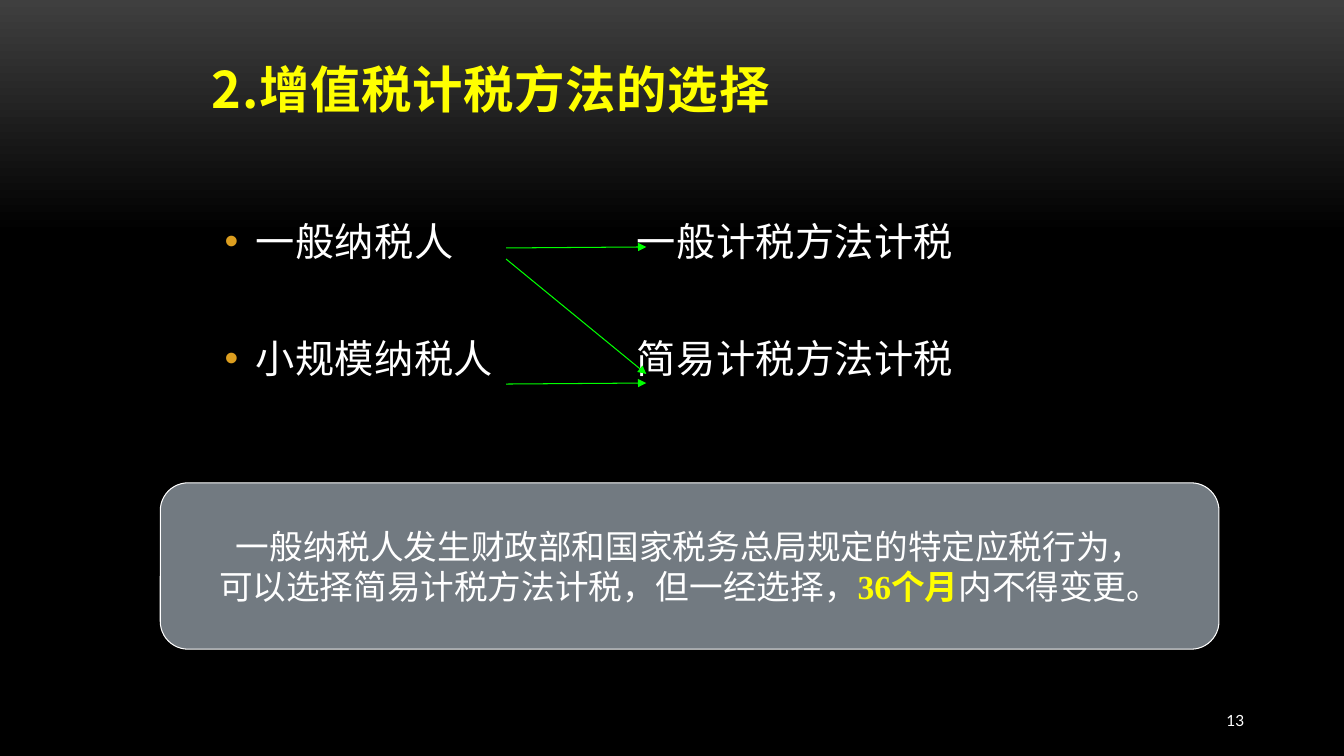
from lxml import etree
from pptx import Presentation
from pptx.dml.color import RGBColor
from pptx.enum.shapes import MSO_CONNECTOR, MSO_SHAPE
from pptx.enum.text import MSO_ANCHOR, PP_ALIGN
from pptx.oxml.ns import qn
from pptx.util import Inches, Pt

LINE = MSO_CONNECTOR.STRAIGHT
ROUND = MSO_SHAPE.ROUNDED_RECTANGLE
TOP, MIDDLE, BOTTOM = MSO_ANCHOR.TOP, MSO_ANCHOR.MIDDLE, MSO_ANCHOR.BOTTOM
LEFT, CENTER, RIGHT = PP_ALIGN.LEFT, PP_ALIGN.CENTER, PP_ALIGN.RIGHT
WIDE, HIGH = Inches(13.33), Inches(7.5)
HAN = "Noto Sans CJK SC"
SERIF = "Times New Roman"
COLORS = {
    "white": "FFFFFF", "yellow": "FFFF00", "green": "00FF00", "slate": "727A81",
    "amber": "DC9E1F", "gray": "3F3F3F", "black": "000000",
}


def rgb(name):
    return RGBColor.from_string(COLORS[name])


def across(share):
    return round(WIDE * share / 100)


def down(share):
    return round(HIGH * share / 100)


def place(left, top, width, height):
    return across(left), down(top), across(width), down(height)


def add_bullet(para):
    props = para._p.get_or_add_pPr()
    props.set("marL", str(Inches(0.31)))
    props.set("indent", str(-Inches(0.31)))
    color = etree.SubElement(props, qn("a:buClr"))
    etree.SubElement(color, qn("a:srgbClr"), val=COLORS["amber"])
    etree.SubElement(props, qn("a:buFont"), typeface="Arial")
    etree.SubElement(props, qn("a:buChar"), char="•")


def write(shape, paras, size=28, font=HAN, color="white", bold=False, align=LEFT,
          anchor=TOP, gap=0, pitch=None, track=0, bullet=False, wrap=True):
    frame = shape.text_frame
    frame.word_wrap = wrap
    frame.vertical_anchor = anchor
    for row, runs in enumerate(paras):
        para = frame.add_paragraph() if row else frame.paragraphs[0]
        para.alignment = align
        if row and gap:
            para.space_before = Pt(gap)
        if pitch:
            para.line_spacing = Pt(pitch)
        if bullet:
            add_bullet(para)
        for text, mark in runs:
            run = para.add_run()
            run.text = text
            run.font.name = font
            run.font.size = Pt(size)
            run.font.bold = bold or mark
            run.font.color.rgb = rgb("yellow" if mark else color)
            props = run._r.get_or_add_rPr()
            if track:
                props.set("spc", str(track))
            etree.SubElement(props, qn("a:ea"), typeface=HAN)


def add_text(slide, spot, paras, **style):
    write(slide.shapes.add_textbox(*place(*spot)), paras, **style)


def add_panel(slide, spot, paras, **style):
    panel = slide.shapes.add_shape(ROUND, *place(*spot))
    panel.shadow.inherit = False
    panel.fill.solid()
    panel.fill.fore_color.rgb = rgb("slate")
    panel.line.color.rgb = rgb("white")
    panel.line.width = Pt(0.75)
    write(panel, paras, **style)


def add_arrow(slide, start, end):
    arrow = slide.shapes.add_connector(
        LINE, across(37.66), down(start), across(48.09), down(end))
    arrow.line.color.rgb = rgb("green")
    arrow.line.width = Pt(0.75)
    etree.SubElement(arrow.line._get_or_add_ln(), qn("a:tailEnd"), type="triangle")
    etree.SubElement(arrow._element.spPr, qn("a:effectLst"))


def paint(slide):
    fill = slide.background.fill
    fill.gradient()
    fill.gradient_angle = 270
    for stop, share, name in zip(fill.gradient_stops, (0, 0.31), ("gray", "black")):
        stop.position = share
        stop.color.rgb = rgb(name)


def main():
    deck = Presentation()
    deck.slide_width, deck.slide_height = WIDE, HIGH
    slide = deck.slides.add_slide(deck.slide_layouts[6])
    paint(slide)

    add_text(slide, (0, 9.07, 73.05, 7.33), [[("2.增值税计税方法的选择", False)]],
             size=36, color="yellow", bold=True, align=CENTER, anchor=BOTTOM, track=50)

    add_text(slide, (15.98, 28.13, 24, 26.67),
             [[("一般纳税人", False)], [("小规模纳税人", False)]],
             gap=49.5, track=30, bullet=True)
    add_text(slide, (46.66, 28.13, 27, 26.67),
             [[("一般计税方法计税", False)], [("简易计税方法计税", False)]],
             gap=49.5, track=30)

    add_panel(slide, (11.93, 63.87, 78.77, 22), [
        [("一般纳税人发生财政部和国家税务总局规定的特定应税行为，", False)],
        [("可以选择简易计税方法计税，但一经选择，", False), ("36个月", True),
         ("内不得变更。", False)],
    ], size=24, font=SERIF, align=CENTER, anchor=MIDDLE, pitch=29, wrap=False)

    for start, end in ((32.8, 32.67), (34.27, 49.47), (50.8, 50.67)):
        add_arrow(slide, start, end)

    add_text(slide, (82.52, 92.67, 10.8, 5.33), [[("13", False)]],
             size=11, font="Lato", align=RIGHT, anchor=MIDDLE)
    deck.save("out.pptx")


if __name__ == "__main__":
    main()
